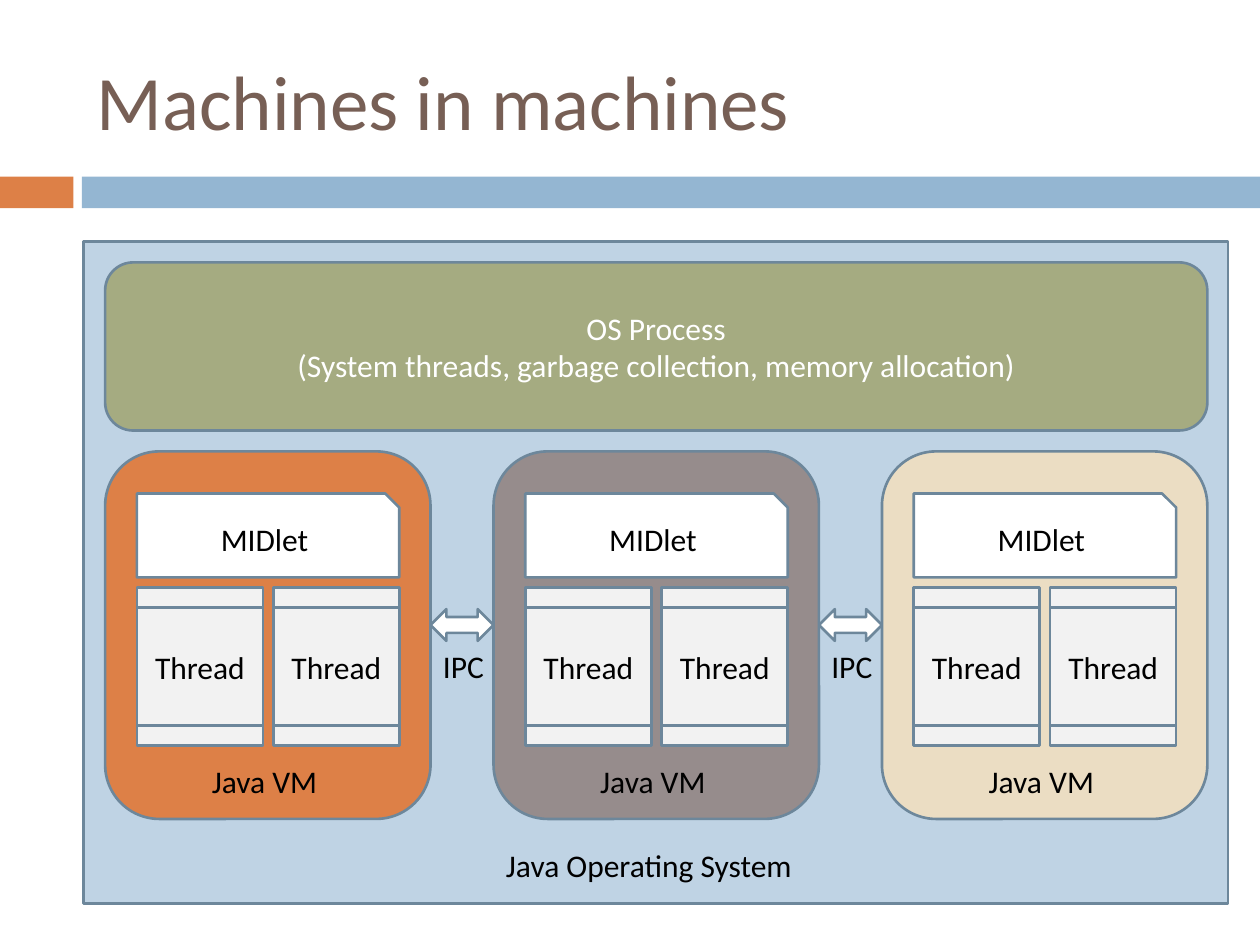
"""Build the "Machines in machines" slide: a Java operating system hosting three VMs."""
import pptx
import pptx.dml.color
import pptx.enum.shapes
import pptx.enum.text
import pptx.util

Cm = pptx.util.Cm
Pt = pptx.util.Pt
SHAPE = pptx.enum.shapes.MSO_SHAPE
ALIGN = pptx.enum.text.PP_ALIGN
MIDDLE = pptx.enum.text.MSO_ANCHOR.MIDDLE

TITLE = "Machines in machines"
SYSTEM = "Java Operating System"
PROCESS = "OS Process\n(System threads, garbage collection, memory allocation)"
VM_FILLS = ["DD8047", "968C8C", "EBDDC3"]
THREADS = ["Thread", "Thread"]
BARS = [(0, 1.48, "DD8047"), (1.65, 23.75, "94B6D2")]

FONT = "Calibri"
OUTLINE = "6D879B"
BLACK, WHITE = "000000", "FFFFFF"
VM_LEFT, VM_TOP, VM_WIDTH, VM_HEIGHT = 2.12, 9.1, 6.56, 7.41
LINK_WIDTH = 1.27
VM_PITCH = VM_WIDTH + LINK_WIDTH
THREAD_PITCH = 2.75


def color(value):
    return pptx.dml.color.RGBColor.from_string(value)


def write(frame, text, size=18, ink=BLACK, align=ALIGN.LEFT):
    para = frame.paragraphs[0]
    para.text = text
    para.alignment = align
    para.font.name = FONT
    para.font.size = Pt(size)
    para.font.color.rgb = color(ink)


def add_box(page, kind, place, fill, text="", ink=BLACK, outline=OUTLINE):
    box = page.shapes.add_shape(kind, *map(Cm, place))
    box.shadow.inherit = False
    box.fill.solid()
    box.fill.fore_color.rgb = color(fill)
    if outline:
        box.line.color.rgb = color(outline)
        box.line.width = Pt(1.5)
    else:
        box.line.fill.background()
    if text:
        box.text_frame.vertical_anchor = MIDDLE
        write(box.text_frame, text, ink=ink, align=ALIGN.CENTER)
    return box


def add_label(page, left, top, width, text):
    frame = page.shapes.add_textbox(Cm(left), Cm(top), Cm(width), Cm(1.02)).text_frame
    frame.word_wrap = False
    frame.auto_size = pptx.enum.text.MSO_AUTO_SIZE.SHAPE_TO_FIT_TEXT
    write(frame, text)


def add_machine(page, left, fill):
    add_box(page, SHAPE.ROUNDED_RECTANGLE, (left, VM_TOP, VM_WIDTH, VM_HEIGHT), fill)
    add_box(page, SHAPE.SNIP_1_RECTANGLE, (left + 0.64, 9.95, 5.29, 1.69), WHITE, "MIDlet")
    for index, name in enumerate(THREADS):
        place = (left + 0.32 + index * THREAD_PITCH, 12.17, 3.18, 2.54)
        thread = add_box(page, SHAPE.FLOWCHART_PREDEFINED_PROCESS, place, "F2F2F2", name)
        thread.rotation = 90
        thread.text_frame._txBody.bodyPr.set("vert", "vert270")
    add_label(page, left + 1.9, 15.24, 2.79, "Java VM")


def add_link(page, left):
    add_box(page, SHAPE.LEFT_RIGHT_ARROW, (left, 12.28, LINK_WIDTH, 0.64), WHITE)
    add_label(page, left, 12.91, 1.37, "IPC")


def main():
    deck = pptx.Presentation()
    deck.slide_width, deck.slide_height = Cm(25.4), Cm(19.05)
    page = deck.slides.add_slide(deck.slide_layouts[5])

    title = page.shapes.title
    title.left, title.top, title.width, title.height = map(Cm, (1.69, 0.64, 22.65, 2.75))
    title.text_frame.vertical_anchor = MIDDLE
    write(title.text_frame, TITLE, 44, "775F55")

    for left, width, fill in BARS:
        add_box(page, SHAPE.RECTANGLE, (left, 3.56, width, 0.64), fill, outline=None)

    add_box(page, SHAPE.RECTANGLE, (1.69, 4.87, 23.07, 13.34), "BFD3E4")
    process_width = 2 * VM_PITCH + VM_WIDTH
    add_box(page, SHAPE.ROUNDED_RECTANGLE, (VM_LEFT, 5.29, process_width, 3.39),
            "A5AB81", PROCESS, WHITE)
    add_label(page, 9.95, 16.93, 6.53, SYSTEM)

    for index, fill in enumerate(VM_FILLS):
        left = VM_LEFT + index * VM_PITCH
        add_machine(page, left, fill)
        if index:
            add_link(page, left - LINK_WIDTH)

    deck.save("out.pptx")


if __name__ == "__main__":
    main()
